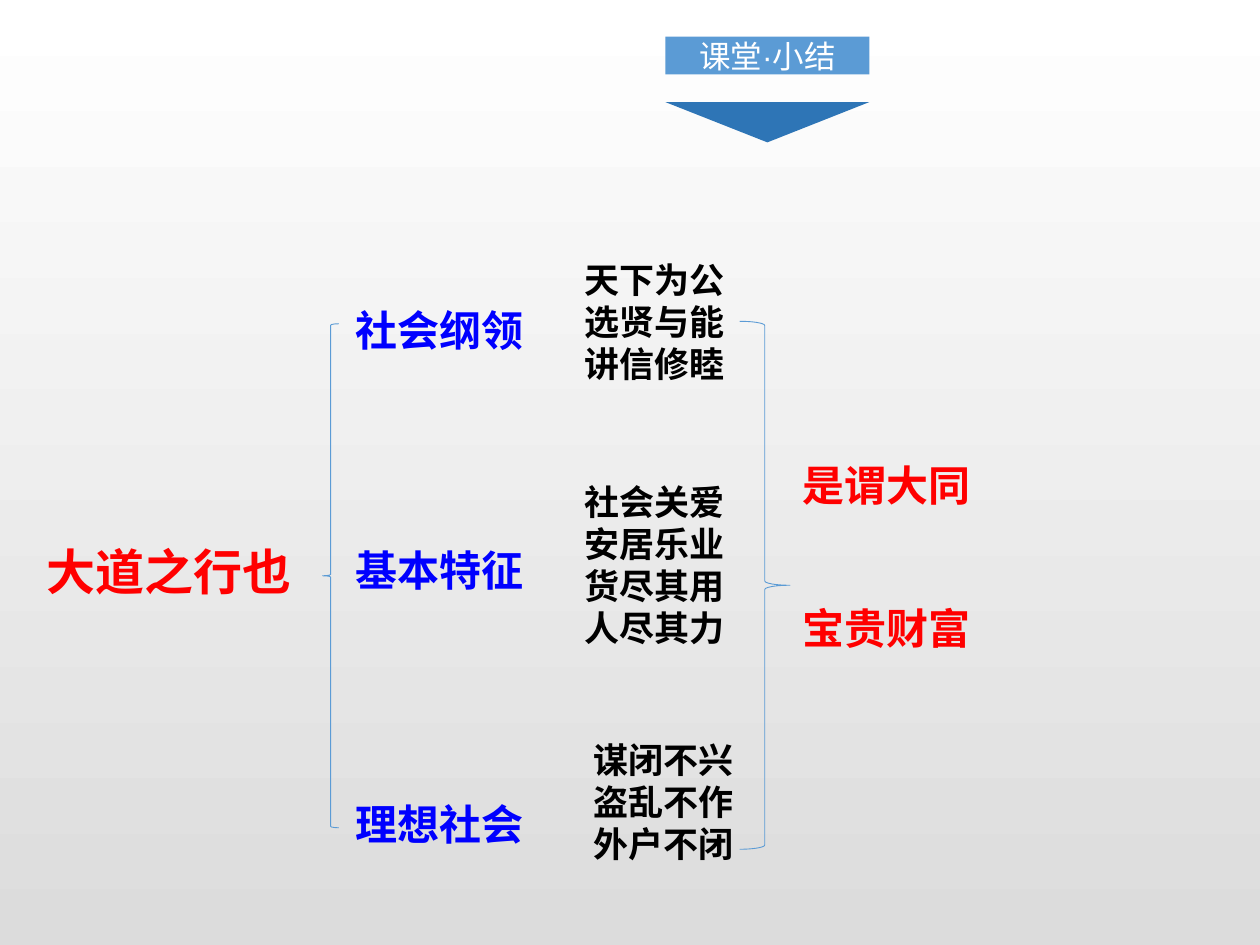
import dataclasses

import lxml.etree
import pptx
import pptx.dml.color
import pptx.enum.shapes
import pptx.enum.text
import pptx.oxml.ns
import pptx.util

Inches = pptx.util.Inches
Shape = pptx.enum.shapes.MSO_SHAPE
Align = pptx.enum.text.PP_ALIGN
CJK_FONT = "Noto Sans CJK SC"
RED, BLUE, BLACK, WHITE = "FF0000", "0000FF", "000000", "FFFFFF"
SKY, DEEP_SKY = "5B9BD5", "2E75B6"


@dataclasses.dataclass
class Note:
    left: float
    top: float
    width: float
    height: float
    lines: list[str]
    size: int
    color: str
    gap: float = 0
    indent: float = 0


@dataclasses.dataclass
class Figure:
    preset: Shape
    left: float
    top: float
    width: float
    height: float
    fill: str | None = None
    line: str | None = None
    rotation: int = 0


NOTES = [
    Note(0.17, 4.27, 2.39, 0.43, ["大道之行也"], 28, RED, indent=0.15),
    Note(2.77, 2.39, 1.49, 0.57, ["社会纲领"], 24, BLUE),
    Note(2.77, 4.29, 1.72, 0.57, ["基本特征"], 24, BLUE),
    Note(2.77, 6.31, 1.58, 0.46, ["理想社会"], 24, BLUE),
    Note(4.59, 2.02, 1.57, 1.31, ["天下为公", "选贤与能", "讲信修睦"], 20, BLACK),
    Note(4.59, 3.78, 1.39, 1.7, ["社会关爱", "安居乐业", "货尽其用", "人尽其力"], 20, BLACK),
    Note(4.66, 5.83, 1.25, 1.31, ["谋闭不兴", "盗乱不作", "外户不闭"], 20, BLACK),
    Note(6.32, 3.62, 1.72, 1.85, ["是谓大同", "宝贵财富"], 24, RED, gap=52.8),
]
FIGURES = [
    Figure(Shape.LEFT_BRACE, 2.56, 2.57, 0.13, 4, line=SKY),
    Figure(Shape.RIGHT_BRACE, 5.87, 2.55, 0.4, 4.19, line=SKY),
    Figure(Shape.ISOSCELES_TRIANGLE, 5.28, 0.81, 1.62, 0.32, fill=DEEP_SKY, rotation=180),
]


def paint(target, color: str) -> None:
    target.rgb = pptx.dml.color.RGBColor.from_string(color)


def write(para, text: str, *, size: int, color: str, font: str = CJK_FONT,
          bold: bool = False, align=Align.JUSTIFY) -> None:
    para.alignment = align
    span = para.add_run()
    span.text = text
    span.font.size = pptx.util.Pt(size)
    span.font.bold = bold
    span.font.name = font
    paint_fill(span.font.fill, color)
    east_asian = lxml.etree.SubElement(span.font._element, pptx.oxml.ns.qn("a:ea"))
    east_asian.set("typeface", CJK_FONT)


def paint_fill(fill, color: str | None) -> None:
    if color:
        fill.solid()
        paint(fill.fore_color, color)
    else:
        fill.background()


def set_margins(frame, side: float, edge: float) -> None:
    frame.margin_left = frame.margin_right = Inches(side)
    frame.margin_top = frame.margin_bottom = Inches(edge)
    frame.word_wrap = True


def add_note(page, note: Note) -> None:
    box = page.shapes.add_textbox(
        Inches(note.left), Inches(note.top), Inches(note.width), Inches(note.height))
    frame = box.text_frame
    set_margins(frame, 0.05 + note.indent, 0.03)
    frame.margin_right = Inches(0.05)
    for index, line in enumerate(note.lines):
        para = frame.add_paragraph() if index else frame.paragraphs[0]
        para.line_spacing = pptx.util.Pt(note.size * 1.2)
        para.space_before = pptx.util.Pt(note.gap if index else 0)
        write(para, line, size=note.size, color=note.color, bold=True)


def add_figure(page, figure: Figure) -> None:
    shape = page.shapes.add_shape(
        figure.preset, Inches(figure.left), Inches(figure.top),
        Inches(figure.width), Inches(figure.height))
    shape.shadow.inherit = False
    shape.rotation = figure.rotation
    paint_fill(shape.fill, figure.fill)
    paint_fill(shape.line.fill, figure.line)
    if figure.line:
        shape.line.width = pptx.util.Pt(0.5)


def add_title(page) -> None:
    title = page.shapes.title
    title.left, title.top = Inches(5.28), Inches(0.29)
    title.width, title.height = Inches(1.62), Inches(0.3)
    paint_fill(title.fill, SKY)
    frame = title.text_frame
    set_margins(frame, 0, 0)
    frame.auto_size = pptx.enum.text.MSO_AUTO_SIZE.NONE
    frame.vertical_anchor = pptx.enum.text.MSO_ANCHOR.MIDDLE
    write(frame.paragraphs[0], "课堂·小结", size=18, color=WHITE, font="Arial", align=Align.CENTER)


def set_background(page) -> None:
    fill = page.background.fill
    fill.gradient()
    fill.gradient_angle = 270
    for stop, color in zip(fill.gradient_stops, (WHITE, "DCDCDC")):
        paint(stop.color, color)


def main() -> None:
    deck = pptx.Presentation()
    deck.slide_width, deck.slide_height = Inches(10), Inches(7.5)
    page = deck.slides.add_slide(deck.slide_layouts.get_by_name("Title Only"))
    set_background(page)
    add_title(page)
    for note in NOTES:
        add_note(page, note)
    for figure in FIGURES:
        add_figure(page, figure)
    deck.save("out.pptx")


if __name__ == "__main__":
    main()
